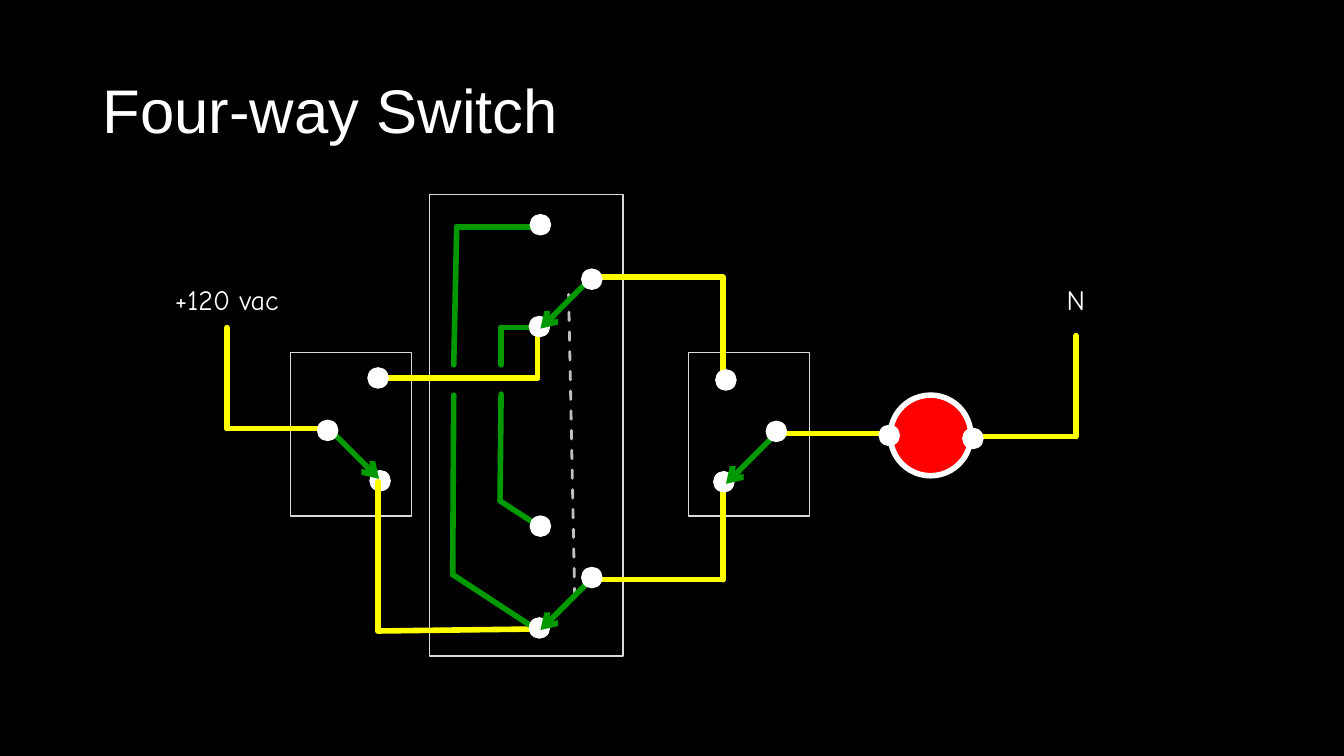
from dataclasses import dataclass
from itertools import pairwise

from lxml import etree
from pptx import Presentation
from pptx import util as u
from pptx.dml.color import RGBColor
from pptx.enum import dml, shapes, text
from pptx.oxml import ns

PX = 9144
TERMINAL = 20
COLORS = {
    "background": "000000",
    "white": "FFFFFF",
    "housing": "D9D9D9",
    "live": "FFFF00",
    "blade": "009900",
    "linkage": "BFBFBF",
    "lamp": "FF0000",
}


@dataclass(frozen=True)
class Box:
    left: int
    top: int
    width: int
    height: int


@dataclass(frozen=True)
class Wire:
    color: str
    points: tuple[tuple[int, int], ...]
    weight: int = 4
    dashed: bool = False
    arrow: bool = False


@dataclass(frozen=True)
class Label:
    wording: str
    box: Box


HOUSINGS = [Box(288, 350, 120, 162), Box(426, 193, 192, 458), Box(683, 350, 120, 162)]
LAMP = Box(883, 392, 80, 80)
LABELS = [
    Label("+120 vac", Box(150, 275, 150, 44)),
    Label("N", Box(992, 275, 150, 44)),
]
LOWER_LEFT_CONTACT = (377, 477)
CONTACTS = [
    (375, 375), (720, 377), (718, 478), (536, 223), (535, 324),
    (536, 522), (535, 623), (882, 432), (965, 435),
]
PIVOTS = [(325, 427), (587, 277), (587, 573), (770, 428)]
WIRES = [
    Wire("live", ((225, 325), (225, 425), (325, 425))),
    Wire("live", ((375, 375), (533, 375), (533, 324))),
    Wire("live", ((375, 478), (375, 626), (533, 624))),
    Wire("live", ((583, 275), (717, 275), (717, 375))),
    Wire("live", ((583, 575), (717, 575), (717, 475))),
    Wire("live", ((780, 430), (880, 430))),
    Wire("live", ((967, 433), (1067, 433), (1067, 333))),
    Wire("blade", ((533, 225), (453, 225), (450, 362))),
    Wire("blade", ((450, 392), (449, 570), (533, 625))),
    Wire("blade", ((530, 325), (497, 325), (497, 362))),
    Wire("blade", ((497, 391), (496, 497), (533, 521))),
    Wire("linkage", ((570, 592), (564, 292)), weight=2, dashed=True),
]
BLADES = [
    Wire("blade", ((329, 428), (376, 475)), arrow=True),
    Wire("blade", ((583, 279), (536, 326)), arrow=True),
    Wire("blade", ((583, 578), (536, 625)), arrow=True),
    Wire("blade", ((767, 433), (720, 480)), arrow=True),
]


def px(length: int) -> u.Emu:
    return u.Emu(length * PX)


def rgb(name: str) -> RGBColor:
    return RGBColor.from_string(COLORS[name])


def place(box: Box) -> tuple[u.Emu, ...]:
    return px(box.left), px(box.top), px(box.width), px(box.height)


def draw_shape(slide, kind: shapes.MSO_SHAPE, box: Box, fill: str | None,
               outline: str, weight: int = 1) -> None:
    part = slide.shapes.add_shape(kind, *place(box))
    part.shadow.inherit = False
    if fill:
        part.fill.solid()
        part.fill.fore_color.rgb = rgb(fill)
    else:
        part.fill.background()
    part.line.color.rgb = rgb(outline)
    part.line.width = u.Pt(weight)


def draw_terminal(slide, center: tuple[int, int]) -> None:
    x, y = center
    half = TERMINAL // 2
    draw_shape(slide, shapes.MSO_SHAPE.OVAL,
               Box(x - half, y - half, TERMINAL, TERMINAL), "white", "white")


def draw_wire(slide, wire: Wire) -> None:
    for start, end in pairwise(wire.points):
        segment = slide.shapes.add_connector(
            shapes.MSO_CONNECTOR.STRAIGHT, *map(px, start + end))
        segment.line.color.rgb = rgb(wire.color)
        segment.line.width = u.Pt(wire.weight)
        if wire.dashed:
            segment.line.dash_style = dml.MSO_LINE.DASH
        outline = segment.line._get_or_add_ln()
        outline.set("cap", "rnd")
        if wire.arrow:
            etree.SubElement(outline, ns.qn("a:tailEnd"), type="arrow")
        etree.SubElement(segment._element.spPr, ns.qn("a:effectLst"))


def style(paragraph, size: int, font: str) -> None:
    for run in paragraph.runs:
        run.font.size = u.Pt(size)
        run.font.name = font
        run.font.color.rgb = rgb("white")


def draw_title(slide, wording: str, box: Box) -> None:
    title = slide.shapes.title
    title.left, title.top, title.width, title.height = place(box)
    frame = title.text_frame
    frame.text = wording
    frame.vertical_anchor = text.MSO_ANCHOR.MIDDLE
    frame.paragraphs[0].alignment = text.PP_ALIGN.LEFT
    frame.paragraphs[0].line_spacing = 0.9
    style(frame.paragraphs[0], 44, "Arial")


def draw_label(slide, label: Label) -> None:
    frame = slide.shapes.add_textbox(*place(label.box)).text_frame
    frame.word_wrap = True
    frame.auto_size = text.MSO_AUTO_SIZE.SHAPE_TO_FIT_TEXT
    frame.text = label.wording
    frame.paragraphs[0].alignment = text.PP_ALIGN.CENTER
    style(frame.paragraphs[0], 20, "Comic Neue")


def main() -> None:
    deck = Presentation()
    deck.slide_width, deck.slide_height = px(1333), px(750)
    slide = deck.slides.add_slide(deck.slide_layouts[5])
    slide.background.fill.solid()
    slide.background.fill.fore_color.rgb = rgb("background")

    draw_title(slide, "Four-way Switch", Box(92, 40, 1150, 145))
    for housing in HOUSINGS:
        draw_shape(slide, shapes.MSO_SHAPE.RECTANGLE, housing, None, "housing")
    draw_terminal(slide, LOWER_LEFT_CONTACT)
    for wire in WIRES:
        draw_wire(slide, wire)
    draw_shape(slide, shapes.MSO_SHAPE.OVAL, LAMP, "lamp", "white", 4)
    for contact in CONTACTS:
        draw_terminal(slide, contact)
    for blade in BLADES:
        draw_wire(slide, blade)
    for pivot in PIVOTS:
        draw_terminal(slide, pivot)
    for label in LABELS:
        draw_label(slide, label)
    deck.save("out.pptx")


if __name__ == "__main__":
    main()
